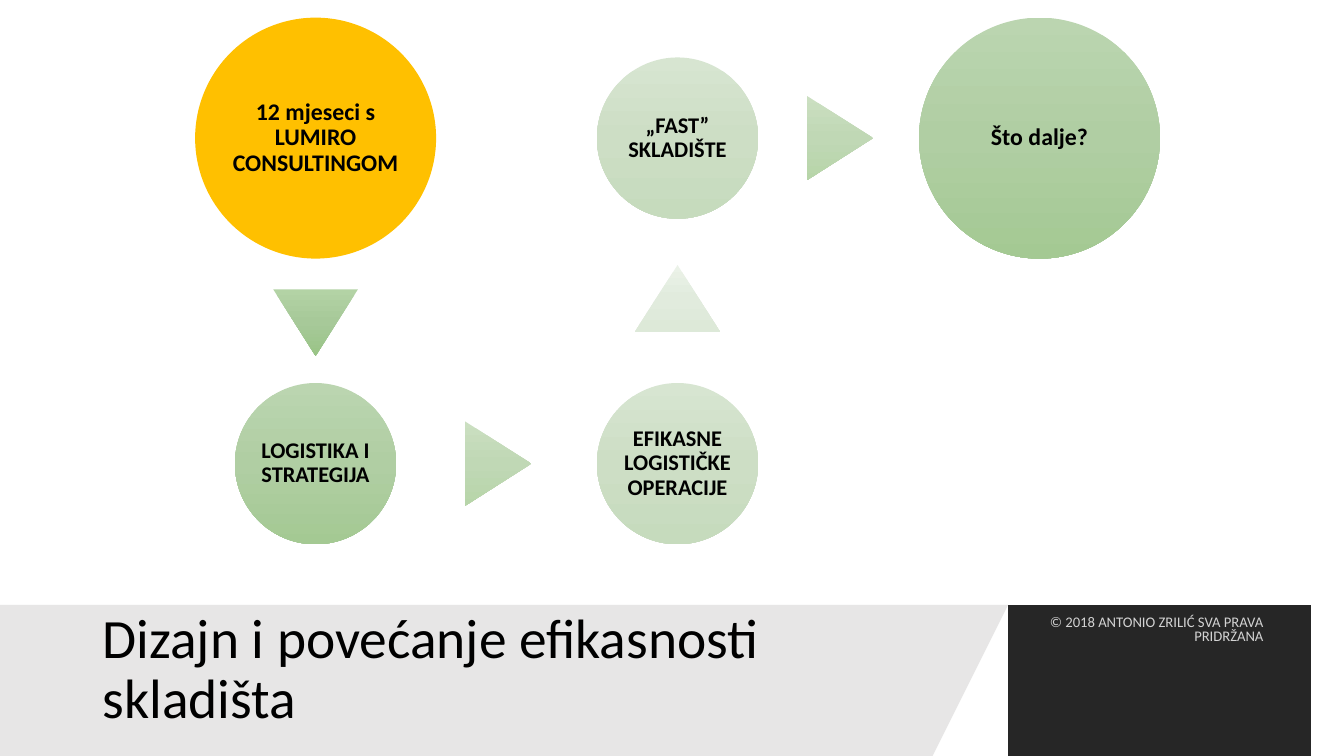
from copy import deepcopy

from lxml import etree
from pptx import Presentation
from pptx.dml.color import RGBColor
from pptx.enum.shapes import MSO_SHAPE
from pptx.enum.text import MSO_ANCHOR, PP_ALIGN
from pptx.oxml.ns import qn
from pptx.util import Inches, Pt

CIRCLE, TRIANGLE = MSO_SHAPE.OVAL, MSO_SHAPE.ISOSCELES_TRIANGLE
LEFT, CENTER, RIGHT = PP_ALIGN.LEFT, PP_ALIGN.CENTER, PP_ALIGN.RIGHT
WIDTH, HEIGHT = 13.33, 7.5
BAND_TOP = 5.87
COLUMNS = [3.13 + 3.59 * index for index in range(3)]
ROWS = [1.37, 4.6]
LARGE, SMALL = 2.39, 1.6
ARROW_WIDTH, ARROW_HEIGHT = 0.84, 0.66

COLORS = {
    "dark": "262626",
    "gray": "E7E6E6",
    "gold": "FFC000",
    "black": "000000",
    "white": "FFFFFF",
}
GRADIENTS = {
    "green circle": ["BBD5B0", "B0CEA3", "A4C993"],
    "pale circle": ["D7E5D1", "CDDEC5", "C6DBBD"],
    "down arrow": ["B3D3A5", "A7C999", "99C486"],
    "right arrow": ["CBDFC1", "C0D8B5", "B7D5A9"],
    "up arrow": ["EBF2E8", "E1EBDD", "DDE9D8"],
}


def style_shape(shape, fill_name):
    """Apply a solid color or a top-to-bottom three-stop gradient, without outline or shadow."""
    shape.shadow.inherit = False
    shape.line.fill.background()
    fill = shape.fill
    if fill_name in COLORS:
        fill.solid()
        fill.fore_color.rgb = RGBColor.from_string(COLORS[fill_name])
        return
    fill.gradient()
    fill.gradient_angle = 270
    gradient = shape.element.spPr.find(qn("a:gradFill"))
    gradient.set("rotWithShape", "0")
    stop_list = gradient.find(qn("a:gsLst"))
    stop_list.insert(1, deepcopy(stop_list[0]))
    for index, stop in enumerate(fill.gradient_stops):
        stop.position = index / 2
        stop.color.rgb = RGBColor.from_string(GRADIENTS[fill_name][index])


def write_text(shape, text, size, color, alignment, spacing=0.9, bold=False):
    frame = shape.text_frame
    frame.word_wrap = True
    frame.vertical_anchor = MSO_ANCHOR.MIDDLE
    paragraph = frame.paragraphs[0]
    paragraph.alignment = alignment
    paragraph.line_spacing = spacing
    run = paragraph.add_run()
    run.text = text
    for name, value in {"name": "Calibri", "size": Pt(size), "bold": bold}.items():
        setattr(run.font, name, value)
    run.font.color.rgb = RGBColor.from_string(COLORS[color])
    return run


presentation = Presentation()
presentation.slide_width = Inches(WIDTH)
presentation.slide_height = Inches(HEIGHT)
slide = presentation.slides.add_slide(presentation.slide_layouts[6])
shapes = slide.shapes

# Bottom band
bands = [
    ("dark", [(10.34, BAND_TOP), (WIDTH, BAND_TOP), (WIDTH, HEIGHT), (9.58, HEIGHT)]),
    ("gray", [(0, BAND_TOP), (10.02, BAND_TOP), (9.26, HEIGHT), (0, HEIGHT)]),
]
for fill_name, points in bands:
    builder = shapes.build_freeform(*points[0], scale=Inches(1))
    builder.add_line_segments(points[1:], close=True)
    style_shape(builder.convert_to_shape(), fill_name)

title = shapes.add_textbox(Inches(0.92), Inches(6.05), Inches(8.44), Inches(1.2))
write_text(title, "Dizajn i povećanje efikasnosti skladišta", 39.6, "black", LEFT)

# Process steps: column, row, diameter, text size, fill, text
steps = [
    (0, 0, LARGE, 17, "gold", "12 mjeseci s LUMIRO CONSULTINGOM"),
    (0, 1, SMALL, 16, "green circle", "LOGISTIKA I STRATEGIJA"),
    (1, 1, SMALL, 16, "pale circle", "EFIKASNE LOGISTIČKE OPERACIJE"),
    (1, 0, SMALL, 16, "pale circle", "„FAST” SKLADIŠTE"),
    (2, 0, LARGE, 17, "green circle", "Što dalje?"),
]
for column, row, diameter, size, fill_name, text in steps:
    left, top = COLUMNS[column] - diameter / 2, ROWS[row] - diameter / 2
    circle = shapes.add_shape(CIRCLE, Inches(left), Inches(top), Inches(diameter), Inches(diameter))
    style_shape(circle, fill_name)
    for side in ("left", "top", "right", "bottom"):
        setattr(circle.text_frame, f"margin_{side}", Inches(0.02))
    write_text(circle, text, size, "black", CENTER, bold=True)

# Arrows between steps: center x, center y, rotation, fill
arrows = [
    (COLUMNS[0], 3.2, 180, "down arrow"),
    (4.94, ROWS[1], 90, "right arrow"),
    (COLUMNS[1], 2.96, 0, "up arrow"),
    (8.33, ROWS[0], 90, "right arrow"),
]
for center_x, center_y, rotation, fill_name in arrows:
    arrow = shapes.add_shape(
        TRIANGLE,
        Inches(center_x - ARROW_WIDTH / 2),
        Inches(center_y - ARROW_HEIGHT / 2),
        Inches(ARROW_WIDTH),
        Inches(ARROW_HEIGHT),
    )
    arrow.rotation = rotation
    style_shape(arrow, fill_name)

footer = shapes.add_textbox(Inches(10.3), Inches(6.05), Inches(2.33), Inches(0.4))
copyright_run = write_text(
    footer, "© 2018 ANTONIO ZRILIĆ SVA PRAVA PRIDRŽANA", 10.5, "white", RIGHT, spacing=0.8
)
footer_color = footer.element.find(".//" + qn("a:srgbClr"))
etree.SubElement(footer_color, qn("a:alpha"), val="80000")

presentation.save("out.pptx")
